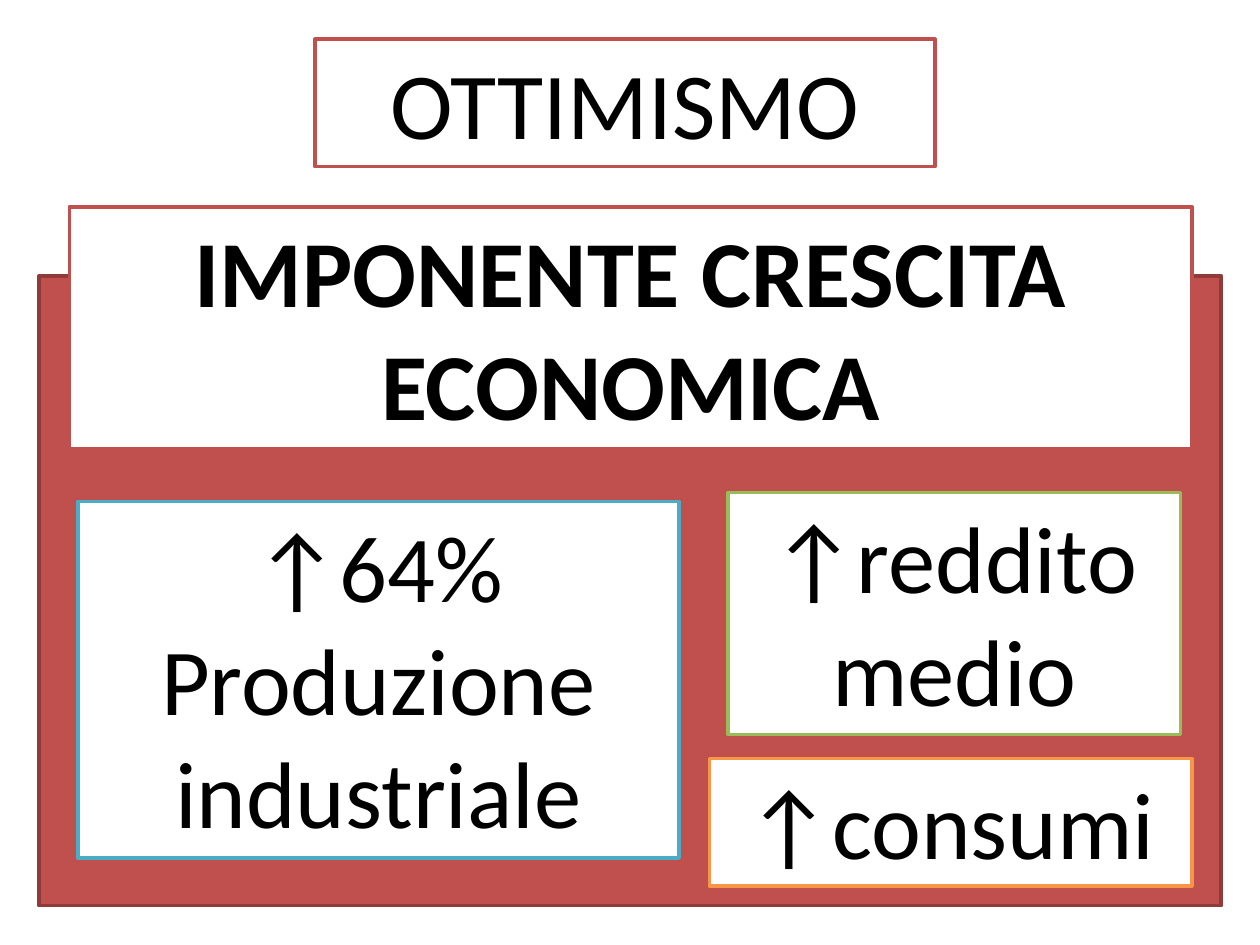
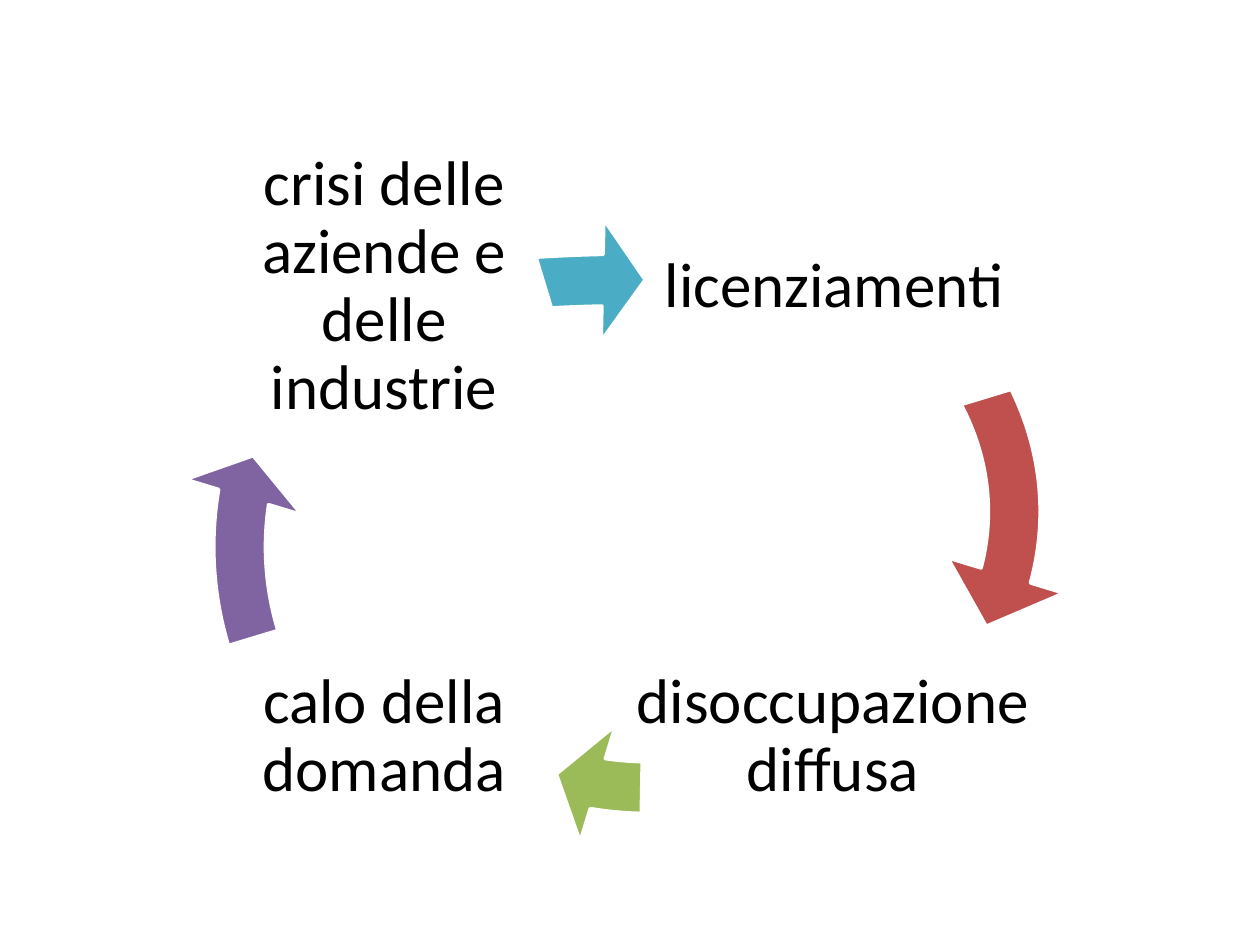
from pptx import Presentation
from pptx.dml.color import RGBColor as Rgb
from pptx.enum.shapes import MSO_SHAPE as Kind
from pptx.enum.text import MSO_ANCHOR as Anchor, MSO_AUTO_SIZE as Auto, PP_ALIGN as Align
from pptx.util import Cm, Pt

HUES = {
    "black": "000000", "white": "FFFFFF", "red": "C0504D", "dark": "8E3B39",
    "blue": "4BACC6", "green": "9BBB59", "orange": "F79646", "violet": "8064A2",
}
FONT = "Calibri"
TITLE_ONLY, BLANK = 5, 6


class Deck:
    def __init__(self):
        self.prs = Presentation()
        self.prs.slide_width, self.prs.slide_height = Cm(25.4), Cm(19.05)
        self.slide = None

    def page(self, layout):
        self.slide = self.prs.slides.add_slide(self.prs.slide_layouts[layout])

    def paint(self, shape, fill, line):
        shape.fill.solid()
        shape.fill.fore_color.rgb = Rgb.from_string(HUES[fill])
        shape.line.color.rgb = Rgb.from_string(HUES[line])
        shape.line.width = Pt(2)

    def words(self, shape, lines, size, bold=False, space=1.0):
        frame = shape.text_frame
        frame.word_wrap = True
        for i, line in enumerate(lines):
            para = frame.add_paragraph() if i else frame.paragraphs[0]
            para.alignment = Align.CENTER
            para.line_spacing = space
            run = para.add_run()
            run.text = line
            run.font.name, run.font.size, run.font.bold = FONT, Pt(size), bold
            run.font.color.rgb = Rgb.from_string(HUES["black"])

    def form(self, kind, at, fill, line):
        shape = self.slide.shapes.add_shape(kind, *map(Cm, at))
        shape.shadow.inherit = False
        self.paint(shape, fill, line)
        return shape

    def fit(self, shape, lines, bold=False):
        frame = shape.text_frame
        frame.vertical_anchor = Anchor.TOP
        self.words(shape, lines, 54, bold)
        frame.auto_size = Auto.SHAPE_TO_FIT_TEXT

    def title(self, at, text):
        shape = self.slide.shapes.title
        shape.left, shape.top, shape.width, shape.height = map(Cm, at)
        self.paint(shape, "white", "red")
        self.fit(shape, [text])

    def card(self, at, line, lines, bold=False):
        self.fit(self.form(Kind.RECTANGLE, at, "white", line), lines, bold)

    def label(self, at, text):
        box = self.slide.shapes.add_textbox(*map(Cm, at))
        frame = box.text_frame
        frame.margin_left = frame.margin_right = Cm(0.13)
        frame.margin_top = frame.margin_bottom = Cm(0.13)
        frame.vertical_anchor = Anchor.MIDDLE
        self.words(box, [text], 36, space=0.9)

    def arrow(self, at, fill, end, start):
        shape = self.form(Kind.CIRCULAR_ARROW, at, fill, "white")
        for i, value in enumerate((0.069, 4.657, end, start, 0.081)):
            shape.adjustments[i] = value


def growth(deck):
    deck.page(TITLE_ONLY)
    deck.title((6.35, 0.79, 12.5, 2.57), "OTTIMISMO")
    deck.form(Kind.RECTANGLE, (0.79, 5.56, 23.83, 12.7), "red", "dark")
    deck.card((1.4, 4.17, 22.63, 4.88), "red", ["IMPONENTE CRESCITA ECONOMICA"], True)
    deck.card((1.57, 10.11, 12.12, 7.19), "blue", ["↑64%", "Produzione industriale"])
    deck.card((14.68, 9.93, 9.12, 4.88), "green", ["↑reddito medio"])
    deck.card((14.3, 15.29, 9.73, 2.57), "orange", ["↑consumi"])


def cycle(deck):
    deck.page(BLANK)
    side, ring = 5.33, 15.09
    high, low = 3.12, 12.19
    steps = (
        ("licenziamenti", 12.42, high, 8.79,
         "red", 2.87, 2.77, 18.8, 5.479, 205.864),
        ("disoccupazione diffusa", 12.14, low, 9.3,
         "green", 5.51, 2.01, ring, 59.479, 54.638),
        ("calo della domanda", 5.08, low, side,
         "violet", 3.61, 3.48, ring, 113.479, 97.864),
        ("crisi delle aziende e delle industrie", 5.08, high, side,
         "blue", -2.82, 4.42, 31.37, 158.111, 151.864),
    )
    for text, left, top, wide, hue, x, y, span, end, start in steps:
        deck.label((left, top, wide, side), text)
        deck.arrow((x, y, span, ring), hue, end, start)


def main():
    deck = Deck()
    growth(deck)
    cycle(deck)
    deck.prs.save("out.pptx")


if __name__ == "__main__":
    main()
